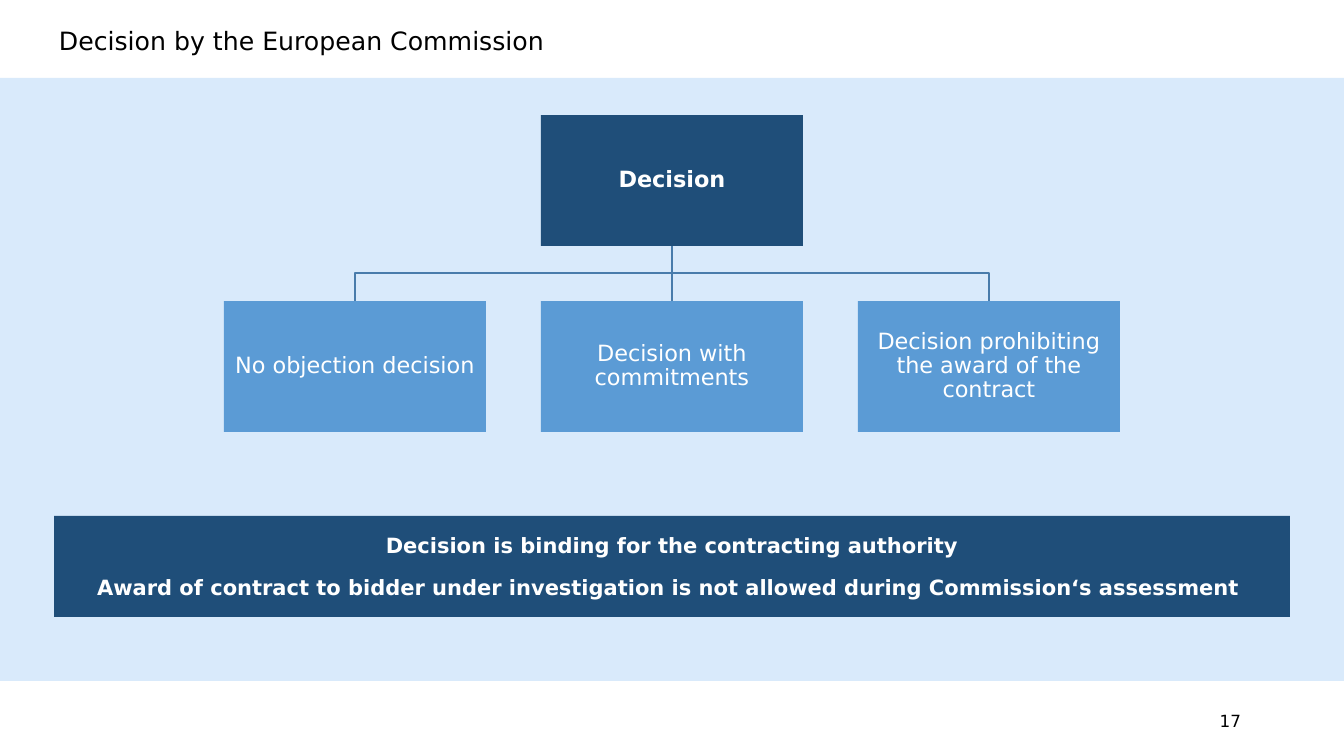
from dataclasses import dataclass

from lxml import etree
from pptx import Presentation
from pptx.dml.color import RGBColor
from pptx.enum.shapes import MSO_CONNECTOR, MSO_SHAPE
from pptx.enum.text import MSO_ANCHOR, PP_ALIGN
from pptx.oxml.ns import qn
from pptx.util import Emu, Pt

STRAIGHT = MSO_CONNECTOR.STRAIGHT
RECTANGLE = MSO_SHAPE.RECTANGLE
TOP, MIDDLE = MSO_ANCHOR.TOP, MSO_ANCHOR.MIDDLE
LEFT, CENTER, RIGHT = PP_ALIGN.LEFT, PP_ALIGN.CENTER, PP_ALIGN.RIGHT
SIDE_TOP, SIDE_BOTTOM = 0, 2


@dataclass(frozen=True)
class Theme:
    font: str = "DejaVu Sans"
    black: str = "000000"
    white: str = "FFFFFF"
    band: str = "D9EAFB"
    dark: str = "1F4E79"
    light: str = "5B9BD5"
    line: str = "497CAB"
    title_size: int = 18
    node_size: int = 16
    banner_size: int = 15
    number_size: int = 12


THEME = Theme()
BOX_WIDTH, BOX_HEIGHT, BOX_GAP = 262, 131, 55
ROOT_TOP, CHILD_LEFT, CHILD_TOP = 115, 224, 301
OUTCOMES = (
    "No objection decision",
    "Decision with commitments",
    "Decision prohibiting the award of the contract",
)
BANNER = (
    "Decision is binding for the contracting authority\n"
    "Award of contract to bidder under investigation is not allowed "
    "during Commission‘s assessment "
)


def px(length):
    return Emu(round(length * 914400 / 100.8))


def write(shape, text, *, size, color, bold=False, align=LEFT, anchor=TOP,
          inset=None, wrap=True, line_spacing=1.0, after=0):
    frame = shape.text_frame
    frame.word_wrap = wrap
    frame.vertical_anchor = anchor
    if inset is not None:
        frame.margin_left = frame.margin_right = px(inset)
        frame.margin_top = frame.margin_bottom = px(inset)
    frame.text = text
    for para in frame.paragraphs:
        para.alignment = align
        para.line_spacing = line_spacing
        para.space_after = Pt(after)
        for span in para.runs:
            span.font.name = THEME.font
            span.font.size = Pt(size)
            span.font.bold = bold
            span.font.color.rgb = RGBColor.from_string(color)


def add_label(page, left, top, width, height, text, **text_format):
    box = page.shapes.add_textbox(px(left), px(top), px(width), px(height))
    write(box, text, **text_format)


def add_box(page, left, top, width, height, fill):
    box = page.shapes.add_shape(RECTANGLE, px(left), px(top), px(width), px(height))
    box.shadow.inherit = False
    box.fill.solid()
    box.fill.fore_color.rgb = RGBColor.from_string(fill)
    box.line.fill.background()
    return box


def add_node(page, left, top, text, fill, bold=False, inset=1):
    node = add_box(page, left, top, BOX_WIDTH, BOX_HEIGHT, fill)
    write(node, text, size=THEME.node_size, color=THEME.white, bold=bold,
          align=CENTER, anchor=MIDDLE, inset=inset, line_spacing=0.9)
    return node


def style_line(shape):
    shape.line.color.rgb = RGBColor.from_string(THEME.line)
    shape.line.width = Pt(1)


def add_trunk(page, root, child, x, top, bottom):
    trunk = page.shapes.add_connector(STRAIGHT, px(x), px(top), px(x), px(bottom))
    style_line(trunk)
    etree.SubElement(trunk._element.spPr, qn("a:effectLst"))
    trunk.begin_connect(root, SIDE_BOTTOM)
    trunk.end_connect(child, SIDE_TOP)


def add_branch(page, start_x, end_x, top, bottom):
    middle = (top + bottom) // 2
    corners = ((start_x, middle), (end_x, middle), (end_x, bottom))
    builder = page.shapes.build_freeform(px(start_x), px(top))
    builder.add_line_segments([(px(x), px(y)) for x, y in corners], close=False)
    branch = builder.convert_to_shape()
    branch.shadow.inherit = False
    branch.fill.background()
    style_line(branch)


def add_decision_tree(page):
    lefts = [CHILD_LEFT + i * (BOX_WIDTH + BOX_GAP) for i in range(len(OUTCOMES))]
    first, middle, last = [left + BOX_WIDTH // 2 for left in lefts]
    root_bottom = ROOT_TOP + BOX_HEIGHT

    # Branches to the outer outcomes
    for end_x in (last, first):
        add_branch(page, middle, end_x, root_bottom, CHILD_TOP)

    # Boxes: the root stands above the middle outcome
    root = add_node(page, lefts[1], ROOT_TOP, "Decision", THEME.dark,
                    bold=True, inset=2)
    children = [add_node(page, left, CHILD_TOP, text, THEME.light)
                for left, text in zip(lefts, OUTCOMES)]
    add_trunk(page, root, children[1], middle, root_bottom, CHILD_TOP)


def main():
    deck = Presentation()
    deck.slide_width, deck.slide_height = px(1344), px(756)
    page = deck.slides.add_slide(deck.slide_layouts[6])

    # Background band, title and page number
    add_box(page, 0, 78, 1344, 603, THEME.band)
    add_label(page, 49, 24, 1230, 44, "Decision by the European Commission",
              size=THEME.title_size, color=THEME.black, line_spacing=0.9)
    add_label(page, 949, 701, 302, 40, "17", size=THEME.number_size,
              color=THEME.black, align=RIGHT, anchor=MIDDLE)

    add_decision_tree(page)

    # Banner with the consequences
    banner = add_box(page, 54, 516, 1236, 101, THEME.dark)
    write(banner, BANNER, size=THEME.banner_size, color=THEME.white, bold=True,
          align=CENTER, anchor=MIDDLE, wrap=False, after=12)

    deck.save("out.pptx")


if __name__ == "__main__":
    main()
